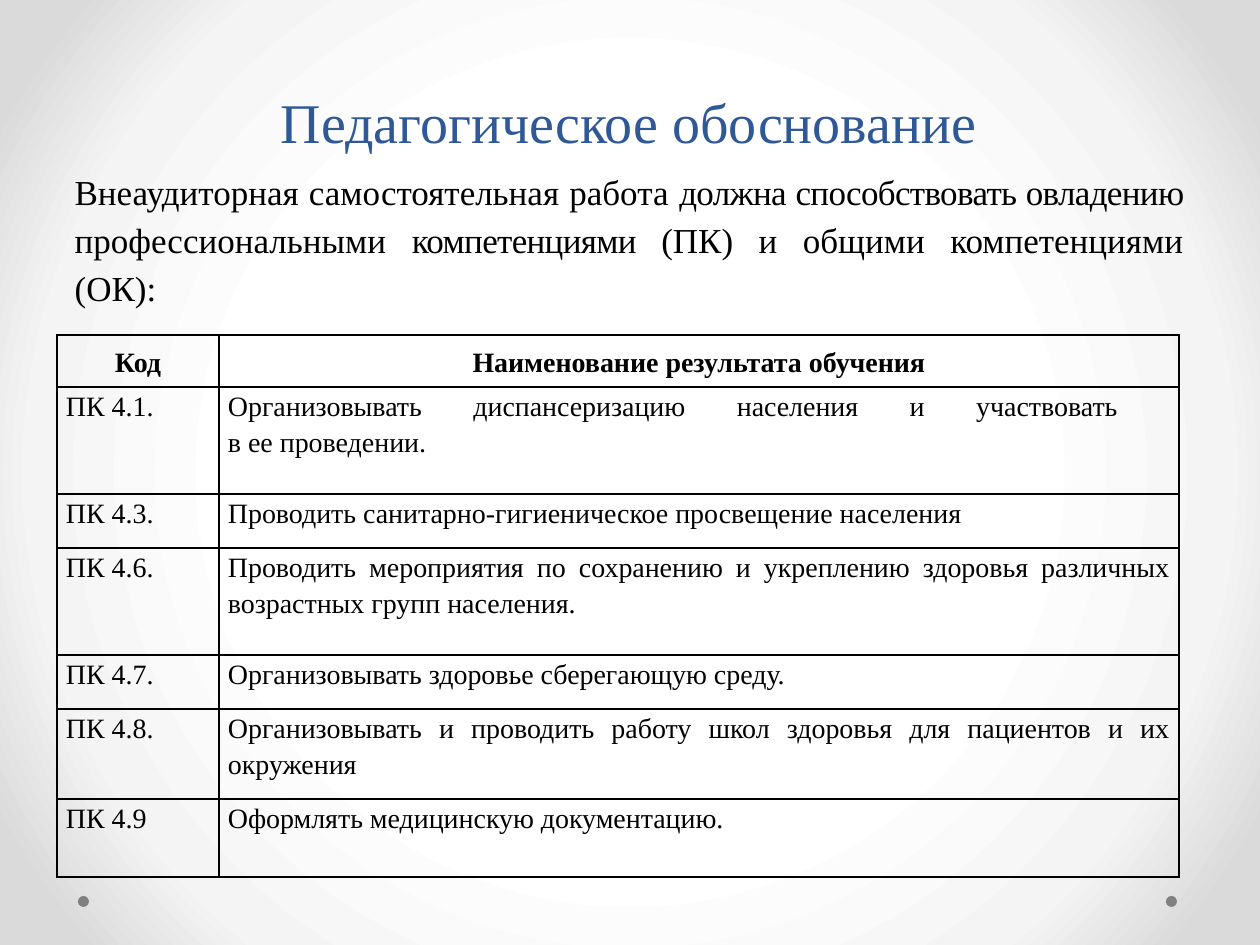
from dataclasses import dataclass

from lxml import etree
from pptx import Presentation
from pptx import util as u
from pptx.dml.color import RGBColor
from pptx.enum import shapes, text
from pptx.oxml import ns


@dataclass(frozen=True)
class Theme:
    """Colours, font and type sizes of the slide."""
    font: str = "Times New Roman"
    blue: str = "2F5897"
    ink: str = "000000"
    dot: str = "808080"
    glow: tuple = ((50, "FFFFFF"), (76, "F4F4F4"), (92, "DADADA"))
    head: int = 32
    lead: int = 20
    cell: int = 16


THEME = Theme()
ALIGN = text.PP_ALIGN
ANCHOR = text.MSO_ANCHOR

TITLE = "Педагогическое обоснование"
LEAD = (
    ("Внеаудиторная самостоятельная работа ", 0),
    ("должна способствовать овладению ", -40),
    ("профессиональными ", 0),
    ("компетенциями ", -40),
    ("(ПК) и общими компетенциями (ОК):", 0),
)
ROWS = (
    (52, "Код", "Наименование результата обучения"),
    (107, "ПК 4.1.", "Организовывать диспансеризацию населения и участвовать \vв ее проведении."),
    (54, "ПК 4.3.", "Проводить санитарно-гигиеническое просвещение населения"),
    (107, "ПК 4.6.", "Проводить мероприятия по сохранению и укреплению здоровья "
                     "различных возрастных групп населения."),
    (54, "ПК 4.7.", "Организовывать здоровье сберегающую среду."),
    (90, "ПК 4.8.", "Организовывать и проводить работу школ здоровья для пациентов и их окружения"),
    (78, "ПК 4.9", "Оформлять медицинскую документацию."),
)


def px(count):
    """Turn px into EMU."""
    return u.Emu(round(count * 914400 / 126))


def apply(target, values):
    """Set attributes from a dict of format values."""
    for name, value in values.items():
        setattr(target, name, value)


def place(shape, box):
    """Move a shape to a px box."""
    apply(shape, dict(zip(("left", "top", "width", "height"), map(px, box))))


def ink(font, size, color, bold=False):
    """Format a font."""
    apply(font, {"name": THEME.font, "size": u.Pt(size), "bold": bold})
    font.color.rgb = RGBColor.from_string(color)


def paint(slide):
    """Fill the background with a round glow."""
    slide.background.fill.gradient()
    grad = slide.element.find(".//" + ns.qn("a:gradFill"))
    for child in list(grad):
        grad.remove(child)
    stops = etree.SubElement(grad, ns.qn("a:gsLst"))
    for pos, color in THEME.glow:
        stop = etree.SubElement(stops, ns.qn("a:gs"), pos=str(pos * 1000))
        etree.SubElement(stop, ns.qn("a:srgbClr"), val=color)
    ring = etree.SubElement(grad, ns.qn("a:path"), path="circle")
    sides = dict.fromkeys("ltrb", "50000")
    etree.SubElement(ring, ns.qn("a:fillToRect"), **sides)


def add_dots(slide, box):
    """Put a round dot at each end of the box."""
    left, top, width, size = box
    for x in (left, left + width - size):
        dot = slide.shapes.add_shape(shapes.MSO_SHAPE.OVAL, *map(px, (x, top, size, size)))
        dot.shadow.inherit = False
        dot.fill.solid()
        dot.fill.fore_color.rgb = RGBColor.from_string(THEME.dot)
        dot.line.fill.background()


def set_frame(shape, box):
    """Place a text placeholder and seat its text at the bottom."""
    place(shape, box)
    apply(shape.text_frame, {"word_wrap": True, "auto_size": text.MSO_AUTO_SIZE.NONE,
                             "vertical_anchor": ANCHOR.BOTTOM})
    return shape.text_frame.paragraphs[0]


def add_title(slide, box):
    """Write the heading."""
    para = set_frame(slide.shapes.title, box)
    para.text = TITLE
    apply(para, {"alignment": ALIGN.CENTER, "line_spacing": u.Pt(58)})
    ink(para.runs[0].font, THEME.head, THEME.blue)


def add_lead(slide, box):
    """Write the opening paragraph without a bullet."""
    para = set_frame(slide.placeholders[1], box)
    apply(para, {"alignment": ALIGN.JUSTIFY, "line_spacing": 1.15,
                 "space_before": u.Pt(0), "space_after": u.Pt(6)})
    props = para._p.get_or_add_pPr()
    for name in ("marL", "indent"):
        props.set(name, "0")
    etree.SubElement(props, ns.qn("a:buNone"))
    for words, gap in LEAD:
        run = para.add_run()
        run.text = words
        ink(run.font, THEME.lead, THEME.ink)
        run._r.get_or_add_rPr().set("spc", str(gap))


def edge(cell):
    """Draw thin lines on all sides of a cell."""
    props = cell._tc.get_or_add_tcPr()
    for spot, side in enumerate("LRTB"):
        line = etree.Element(ns.qn("a:ln" + side), w=str(u.Pt(1)))
        fill = etree.SubElement(line, ns.qn("a:solidFill"))
        etree.SubElement(fill, ns.qn("a:srgbClr"), val=THEME.ink)
        props.insert(spot, line)


def fill_cell(cell, words, head):
    """Write and format one cell."""
    apply(cell, {"margin_left": px(9), "margin_right": px(9), "margin_top": 0, "margin_bottom": 0,
                 "vertical_anchor": ANCHOR.MIDDLE if head else ANCHOR.TOP})
    cell.fill.background()
    edge(cell)
    para = cell.text_frame.paragraphs[0]
    para.text = words
    apply(para, {"alignment": ALIGN.CENTER if head else ALIGN.JUSTIFY,
                 "line_spacing": 1.15, "space_after": u.Pt(10)})
    for run in para.runs:
        ink(run.font, THEME.cell, THEME.ink, head)


def add_grid(slide, box, code):
    """Build the table, with a code column of the given width."""
    grid = slide.shapes.add_table(len(ROWS), 2, *map(px, box)).table
    apply(grid, {"first_row": False, "horz_banding": False})
    for col, width in zip(grid.columns, (code, box[2] - code)):
        col.width = px(width)
    for i, (height, *words) in enumerate(ROWS):
        grid.rows[i].height = px(height)
        for j, part in enumerate(words):
            fill_cell(grid.cell(i, j), part, i == 0)


def main():
    """Build and save the slide."""
    deck = Presentation()
    apply(deck, {"slide_width": px(1260), "slide_height": px(945)})
    slide = deck.slides.add_slide(deck.slide_layouts[1])
    paint(slide)
    add_dots(slide, (78, 896, 1099, 11))
    add_title(slide, (62, 26, 1134, 135))
    add_lead(slide, (62, 155, 1134, 160))
    add_grid(slide, (57, 335, 1122, sum(row[0] for row in ROWS)), 162)
    deck.save("out.pptx")


if __name__ == "__main__":
    main()
